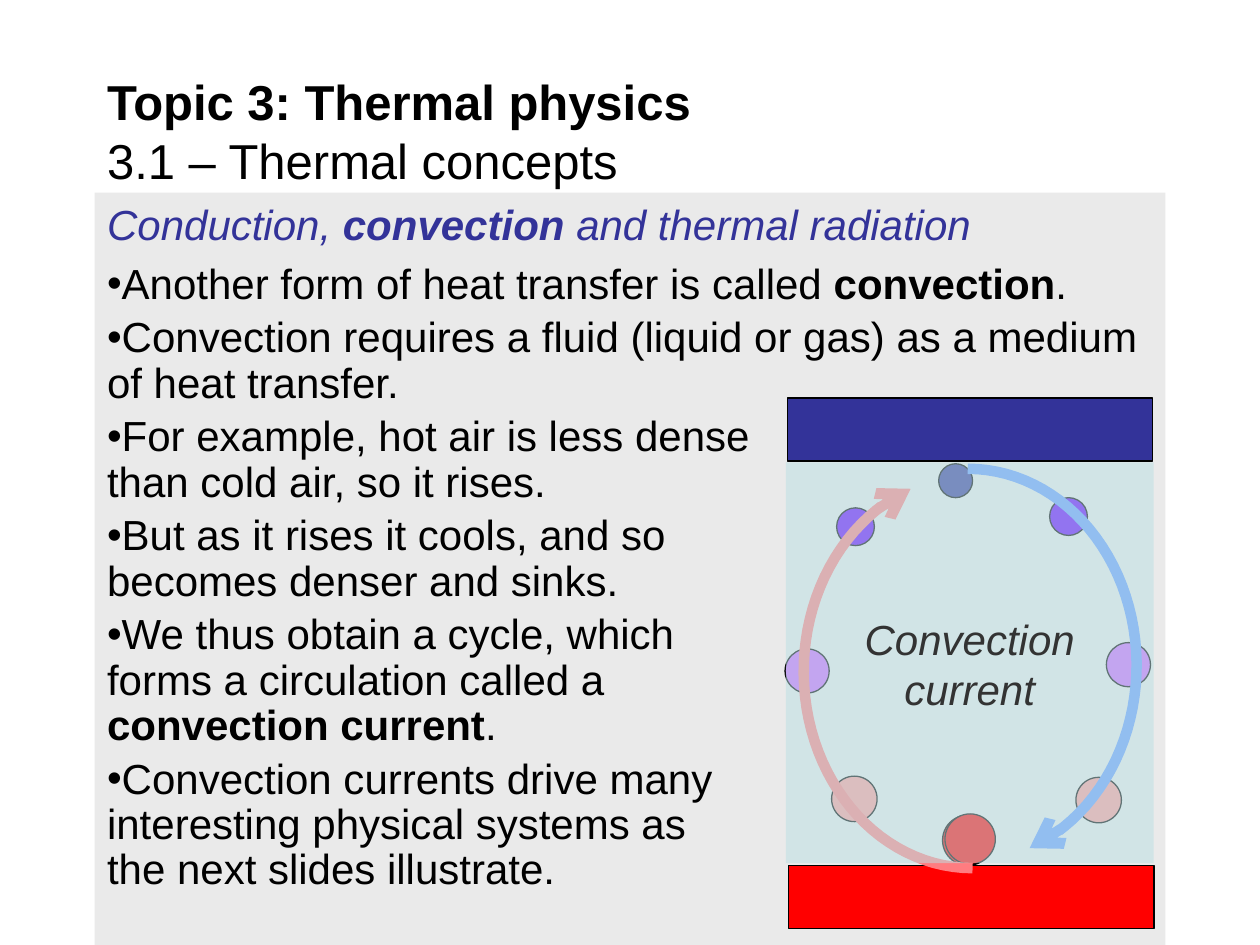
from math import cos, radians, sin

from lxml.etree import SubElement
from pptx import Presentation
from pptx.dml.color import RGBColor
from pptx.enum.shapes import MSO_SHAPE
from pptx.enum.text import MSO_ANCHOR, MSO_AUTO_SIZE, PP_ALIGN
from pptx.oxml.ns import qn
from pptx.util import Pt

BLACK = RGBColor(0, 0, 0)
CHARCOAL = RGBColor(0x33, 0x33, 0x33)
GREY = RGBColor(0xEA, 0xEA, 0xEA)
NAVY = RGBColor(0x33, 0x33, 0x99)
RED = RGBColor(0xFF, 0, 0)
PINK = RGBColor(0xFF, 0x99, 0x99)
LILAC = RGBColor(0xCC, 0x66, 0xFF)
VIOLET = RGBColor(0x66, 0, 0xFF)
WARM = RGBColor(0xFF, 0x7C, 0x80)
COOL = RGBColor(0x66, 0x99, 0xFF)
AIR = RGBColor(0xBB, 0xE0, 0xE3)

HEADING = [("Conduction, ", False), ("convection", True), (" and thermal radiation", False)]
BULLETS = [
    [("Another form of heat transfer is called ", False), ("convection", True), (".", False)],
    [("Convection requires a fluid (liquid or gas) as a medium of heat transfer.", False)],
    [("For example, hot air is less dense\nthan cold air, so it rises.", False)],
    [("But as it rises it cools, and so\nbecomes denser and sinks.", False)],
    [("We thus obtain a cycle, which\nforms a circulation called a\n", False),
     ("convection current", True), (".", False)],
    [("Convection currents drive many\ninteresting physical systems as\n"
      "the next slides illustrate.", False)],
]
# Air parcels: centre x, centre y, diameter, colour
PARCELS = [
    (104, 252.7, 28.8, RED), (39.2, 229, 26, PINK), (12.2, 155.9, 25.2, LILAC),
    (39.9, 73.5, 21.6, VIOLET), (97.1, 47.2, 19.4, NAVY), (161.6, 67.7, 21.6, VIOLET),
    (195.8, 152.3, 25.2, LILAC), (178.8, 229.7, 26, PINK), (105.4, 252, 28.8, RED),
]


def place(shape, box):
    shape.left, shape.top, shape.width, shape.height = (Pt(v) for v in box)


def style_font(para, size, color, italic=False):
    para.font.name = "Arial"
    para.font.size = Pt(size)
    para.font.color.rgb = color
    para.font.italic = italic


def add_spans(para, spans):
    for text, bold in spans:
        for index, line in enumerate(text.split("\n")):
            if index:
                para.add_line_break()
            if line:
                span = para.add_run()
                span.text = line
                span.font.bold = bold


def set_bullet(para, char=None):
    props = para._p.get_or_add_pPr()
    props.set("marL", "0")
    props.set("indent", "0")
    if char:
        SubElement(props, qn("a:buChar")).set("char", char)
    else:
        SubElement(props, qn("a:buNone"))


def add_title(page, box):
    title = page.shapes.title
    place(title, box)
    frame = title.text_frame
    frame.auto_size = MSO_AUTO_SIZE.NONE
    frame.vertical_anchor = MSO_ANCHOR.MIDDLE
    para = frame.paragraphs[0]
    para.alignment = PP_ALIGN.LEFT
    add_spans(para, [("Topic 3: Thermal physics\n", True), ("3.1 – Thermal concepts", False)])
    style_font(para, 28, BLACK)


def add_body(page, box):
    body = page.placeholders[1]
    place(body, box)
    body.fill.solid()
    body.fill.fore_color.rgb = GREY
    frame = body.text_frame
    frame.auto_size = MSO_AUTO_SIZE.NONE

    heading = frame.paragraphs[0]
    set_bullet(heading)
    heading.space_before = Pt(0)
    add_spans(heading, HEADING)
    style_font(heading, 24, NAVY, italic=True)

    for index, spans in enumerate(BULLETS):
        para = frame.add_paragraph()
        set_bullet(para, "•")
        para.space_before = Pt(4.8)
        para.line_spacing = 0.9 if index else 1.0
        add_spans(para, spans)
        style_font(para, 24, BLACK)


def add_solid(page, kind, box, color, outlined=True):
    shape = page.shapes.add_shape(kind, *(Pt(v) for v in box))
    shape.shadow.inherit = False
    shape.fill.solid()
    shape.fill.fore_color.rgb = color
    if outlined:
        shape.line.color.rgb = BLACK
        shape.line.width = Pt(0.75)
    else:
        shape.line.fill.background()
    return shape


def add_flow(page, center_x, center_y, start, color):
    """Draw an elliptical arrow clockwise from the start angle."""
    radius_x, radius_y, sweep, steps = 96.5, 112.3, 158.5, 48
    angles = [radians(start + sweep * step / steps) for step in range(steps + 1)]
    points = [(Pt(center_x + radius_x * cos(a)), Pt(center_y + radius_y * sin(a)))
              for a in angles]
    builder = page.shapes.build_freeform(*points[0])
    builder.add_line_segments(points[1:], close=False)
    arrow = builder.convert_to_shape()
    arrow.shadow.inherit = False
    arrow.fill.background()
    arrow.line.color.rgb = color
    arrow.line.width = Pt(6)
    outline = arrow.element.spPr.find(qn("a:ln"))
    SubElement(outline, qn("a:tailEnd")).set("type", "arrow")


def add_diagram(page, box):
    left, top, width, height = box
    # Hot and cold plates
    plate_width, plate_height = 208.8, 36
    plate_top = top + height - plate_height
    add_solid(page, MSO_SHAPE.RECTANGLE, (left + 1.7, plate_top, plate_width, plate_height), RED)
    add_solid(page, MSO_SHAPE.RECTANGLE, (left + 1, top, plate_width, plate_height), NAVY)
    # Air parcels
    for x, y, size, color in PARCELS:
        spot = (left + x - size / 2, top + y - size / 2, size, size)
        add_solid(page, MSO_SHAPE.OVAL, spot, color)
    # Rising and sinking flow
    add_flow(page, left + 106.8, top + 156.3, 90, WARM)
    add_flow(page, left + 104, top + 152.7, -90, COOL)
    # Translucent air between the plates
    air = add_solid(page, MSO_SHAPE.RECTANGLE, (left, top + 36.7, width, 229), AIR, outlined=False)
    tint = air.element.spPr.find(qn("a:solidFill"))[0]
    SubElement(tint, qn("a:alpha")).set("val", "52000")
    # Caption
    caption = page.shapes.add_textbox(Pt(left + 28.4), Pt(top + 119.5), Pt(153.4), Pt(64.8))
    caption.text_frame.word_wrap = True
    para = caption.text_frame.paragraphs[0]
    para.text = "Convection current"
    para.alignment = PP_ALIGN.CENTER
    style_font(para, 24, CHARCOAL, italic=True)


def main():
    deck = Presentation()
    deck.slide_width, deck.slide_height = Pt(720), Pt(540)
    page = deck.slides.add_slide(deck.slide_layouts[1])
    add_title(page, (54, 42, 612, 65.5))
    add_body(page, (54, 110, 612, 430))
    add_diagram(page, (449, 227.5, 210.2, 303.1))
    deck.save("out.pptx")


if __name__ == "__main__":
    main()
